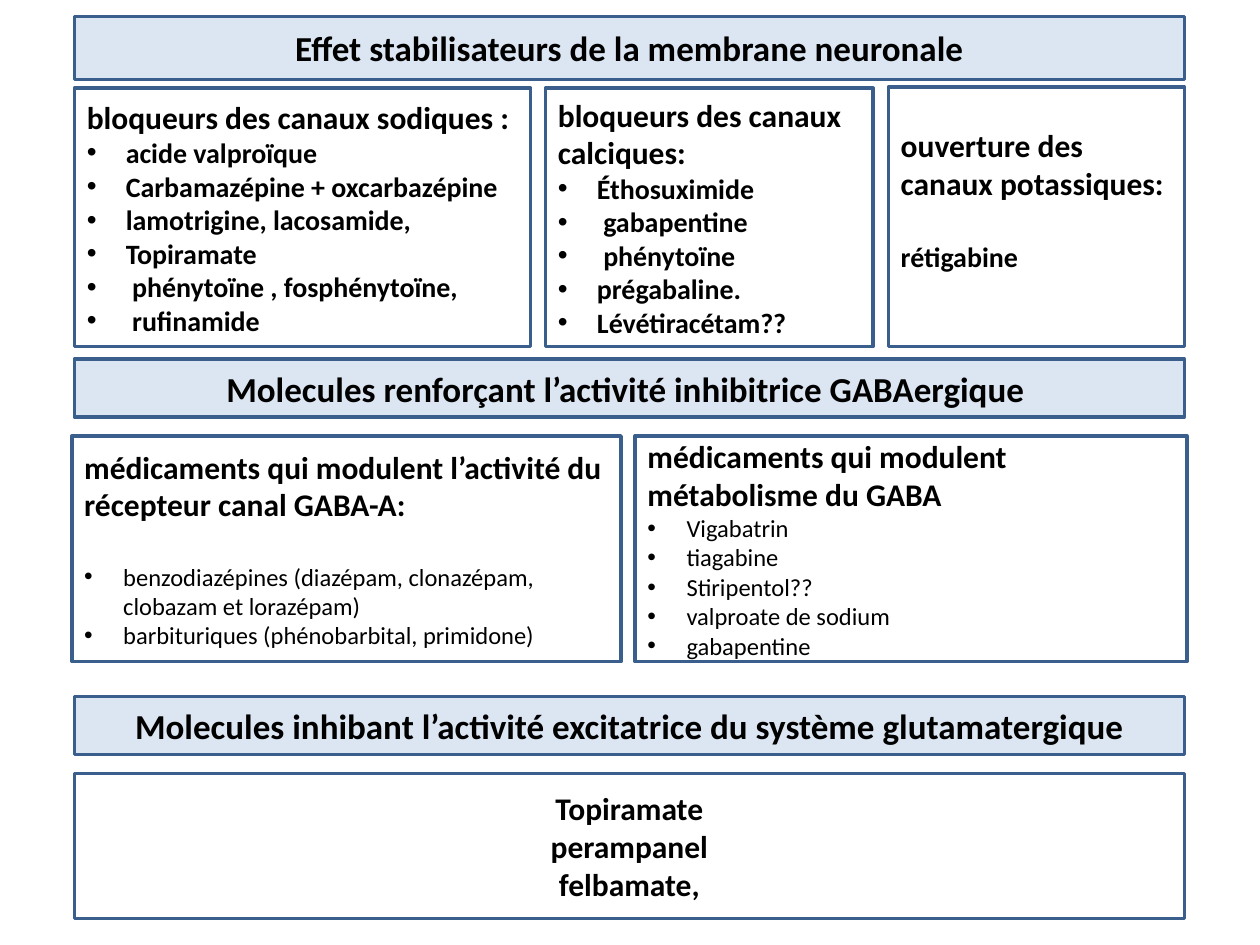
import pptx
from pptx.util import Inches, Pt
from pptx.dml.color import RGBColor
from pptx.enum.shapes import MSO_SHAPE
from pptx.enum.text import MSO_ANCHOR, PP_ALIGN
from lxml import etree

COLORS = {"band": "DCE6F2", "box": "FFFFFF", "line": "3A5F8C", "text": "000000"}
FONT = "Calibri"
LEFT, WIDTH = 0.59, 8.81

# Full-width bands: top, height, title
BANDS = [
    (0.13, 0.5, "Effet stabilisateurs de la membrane neuronale"),
    (2.85, 0.46, "Molecules renforçant l’activité inhibitrice GABAergique "),
    (5.53, 0.46, "Molecules inhibant l’activité excitatrice du système glutamatergique"),
]

# Boxes below the bands; gap is the space in points after the heading
BOXES = [
    {"at": (LEFT, 0.7, 3.62, 2.05), "head": "bloqueurs des canaux sodiques :",
     "items": ["acide valproïque", "Carbamazépine + oxcarbazépine",
               "lamotrigine, lacosamide,", "Topiramate",
               " phénytoïne , fosphénytoïne,", " rufinamide"]},
    {"at": (4.33, 0.7, 2.6, 2.05), "head": "bloqueurs des canaux calciques:",
     "items": ["Éthosuximide", " gabapentine", " phénytoïne", "prégabaline.",
               "Lévétiracétam??"]},
    {"at": (7.05, 0.69, 2.35, 2.06), "head": "ouverture des canaux potassiques:",
     "items": ["rétigabine"], "bullets": False, "gap": 22, "bottom": 0.32},
    {"at": (0.57, 3.46, 4.36, 1.79),
     "head": "médicaments qui modulent l’activité du récepteur canal GABA-A:",
     "items": ["benzodiazépines (diazépam, clonazépam, clobazam et lorazépam)",
               "barbituriques (phénobarbital, primidone)"],
     "size": 14, "bold": False, "gap": 22},
    {"at": (5.04, 3.46, 4.38, 1.79),
     "head": "médicaments qui modulent métabolisme du GABA",
     "items": ["Vigabatrin", "tiagabine", "Stiripentol??", "valproate de sodium",
               "gabapentine"],
     "size": 14, "bold": False},
]
GLUTAMATE = ["Topiramate", "perampanel", "felbamate,"]


def rgb(name):
    return RGBColor.from_string(COLORS[name])


def add_box(at, fill):
    s = slide.shapes.add_shape(MSO_SHAPE.RECTANGLE, *map(Inches, at))
    s.shadow.inherit = False
    s.fill.solid()
    s.fill.fore_color.rgb = rgb(fill)
    s.line.color.rgb = rgb("line")
    s.line.width = Pt(2)
    tf = s.text_frame
    tf.word_wrap = True
    tf.vertical_anchor = MSO_ANCHOR.MIDDLE
    return tf


def add_line(tf, text, size, bold=True, align=PP_ALIGN.LEFT, bullet=False):
    p = tf.paragraphs[0]
    if p.runs:
        p = tf.add_paragraph()
    p.alignment = align
    r = p.add_run()
    r.text = text
    r.font.name, r.font.size, r.font.bold = FONT, Pt(size), bold
    r.font.color.rgb = rgb("text")
    if bullet:
        pPr = p._p.get_or_add_pPr()
        pPr.set("marL", str(Inches(0.31)))
        pPr.set("indent", str(-Inches(0.31)))
        ns = pptx.oxml.ns.qn
        etree.SubElement(pPr, ns("a:buFont")).set("typeface", "Arial")
        etree.SubElement(pPr, ns("a:buChar")).set("char", "•")
    return p


prs = pptx.Presentation()
prs.slide_width, prs.slide_height = Inches(10), Inches(7.5)
slide = prs.slides.add_slide(prs.slide_layouts[6])

# Section bands
for top, height, title in BANDS:
    tf = add_box((LEFT, top, WIDTH, height), "band")
    add_line(tf, title, 20, align=PP_ALIGN.CENTER)

# Drug boxes
for box in BOXES:
    tf = add_box(box["at"], "box")
    tf.margin_bottom = Inches(box.get("bottom", 0.05))
    add_line(tf, box["head"], 18)
    for i, item in enumerate(box["items"]):
        p = add_line(tf, item, box.get("size", 16), box.get("bold", True),
                     bullet=box.get("bullets", True))
        if i == 0 and "gap" in box:
            p.space_before = Pt(box["gap"])

# Glutamate box
tf = add_box((LEFT, 6.14, WIDTH, 1.15), "box")
for name in GLUTAMATE:
    add_line(tf, name, 18, align=PP_ALIGN.CENTER)

prs.save("out.pptx")
